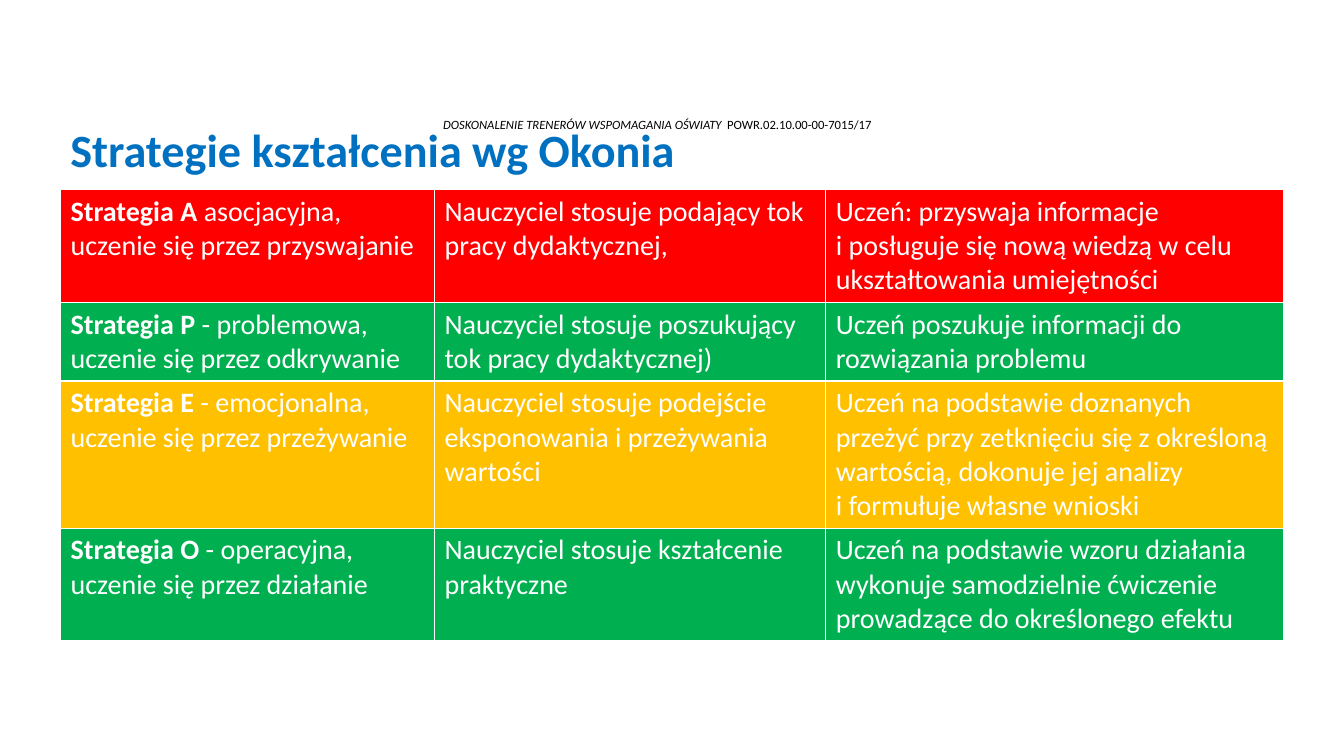
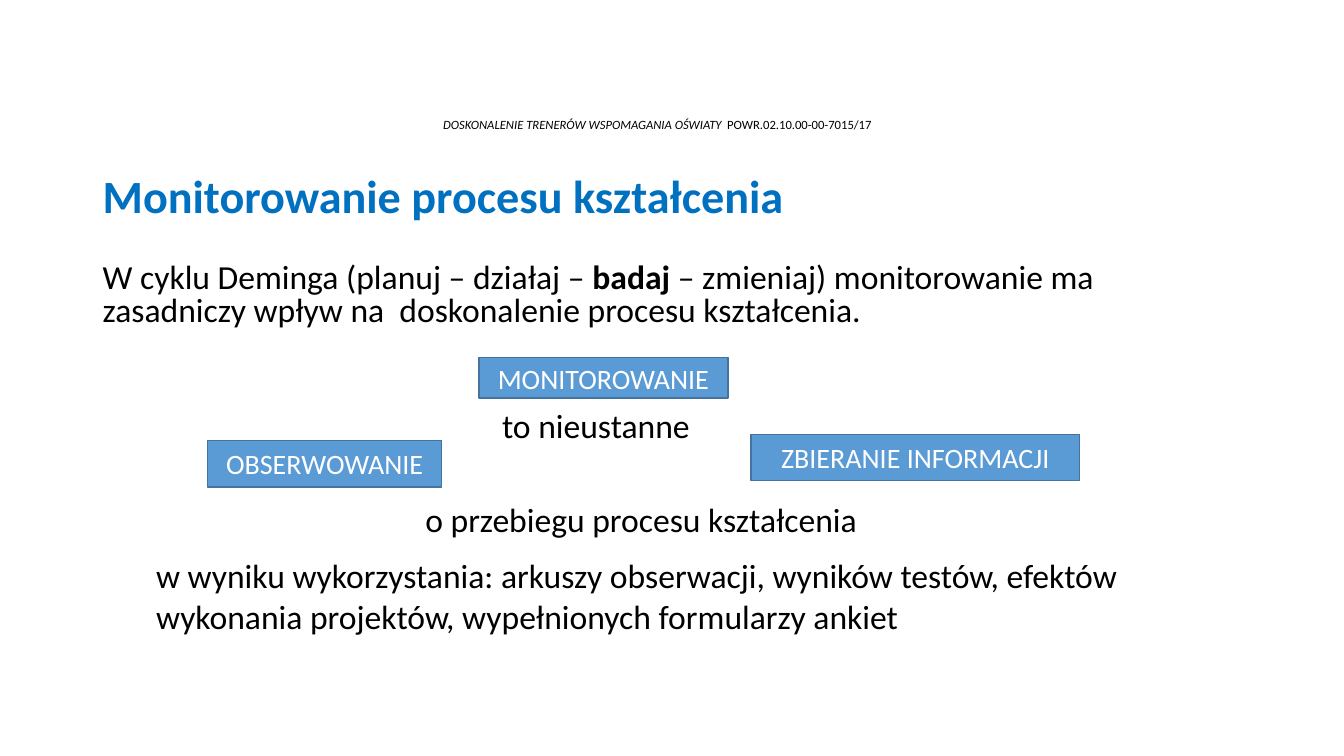
"""Build two slides on teaching strategies and on monitoring the learning process."""
from dataclasses import dataclass

from lxml.etree import SubElement
from pptx import Presentation
from pptx.dml.color import RGBColor
from pptx.enum.shapes import MSO_SHAPE as Preset
from pptx.enum.text import MSO_ANCHOR as Anchor, PP_ALIGN as Align
from pptx.oxml.ns import qn
from pptx.util import Inches, Pt

FONT = "Calibri"
BLACK, WHITE, TITLE_BLUE = "000000", "FFFFFF", "0070C0"
BOX_FILL, BOX_LINE = "5B9BD5", "43739E"
RED, GREEN, AMBER = "FF0000", "00B050", "FFC000"


@dataclass(frozen=True)
class Run:
    text: str
    bold: bool = False
    italic: bool = False


@dataclass(frozen=True)
class Area:
    left: float
    top: float
    width: float
    height: float

    def lengths(self):
        return [Inches(value) for value in (self.left, self.top, self.width, self.height)]


@dataclass(frozen=True)
class Strategy:
    name: str
    description: str
    teacher: str
    pupil: str
    color: str
    height: float


@dataclass(frozen=True)
class Keyword:
    text: str
    area: Area
    preset: Preset = Preset.RECTANGLE


HEADER = [
    Run("DOSKONALENIE TRENERÓW WSPOMAGANIA OŚWIATY  ", italic=True),
    Run("POWR.02.10.00-00-7015/17"),
]
COLUMN_WIDTHS = (3.71, 3.88, 4.54)
STRATEGIES = [
    Strategy("Strategia A ", "asocjacyjna, uczenie się przez przyswajanie",
             "Nauczyciel stosuje podający tok pracy dydaktycznej,",
             "Uczeń: przyswaja informacje\ni posługuje się nową wiedzą w celu "
             "ukształtowania umiejętności", RED, 1.12),
    Strategy("Strategia P ", "- problemowa, uczenie się przez odkrywanie",
             "Nauczyciel stosuje poszukujący tok pracy dydaktycznej)",
             "Uczeń poszukuje informacji do rozwiązania problemu", GREEN, 0.78),
    Strategy("Strategia E ", "- emocjonalna, uczenie się przez przeżywanie",
             "Nauczyciel stosuje podejście eksponowania i przeżywania wartości",
             "Uczeń na podstawie doznanych przeżyć przy zetknięciu się z określoną "
             "wartością, dokonuje jej analizy\ni formułuje własne wnioski", AMBER, 1.46),
    Strategy("Strategia O ", "- operacyjna, uczenie się przez działanie",
             "Nauczyciel stosuje kształcenie praktyczne",
             "Uczeń na podstawie wzoru działania wykonuje samodzielnie ćwiczenie "
             "prowadzące do określonego efektu", GREEN, 1.12),
]
KEYWORDS = [
    Keyword("MONITOROWANIE", Area(4.75, 3.55, 2.47, 0.4)),
    Keyword("OBSERWOWANIE", Area(2.06, 4.37, 2.32, 0.46), Preset.FLOWCHART_PROCESS),
    Keyword("ZBIERANIE INFORMACJI", Area(7.45, 4.31, 3.26, 0.46)),
]


def rgb(color: str) -> RGBColor:
    return RGBColor.from_string(color)


def write(frame, runs: list[Run], size: float, color: str = BLACK,
          align: Align = Align.LEFT, spacing: float = 1.0) -> None:
    paragraph = frame.paragraphs[0]
    paragraph.alignment = align
    paragraph.line_spacing = spacing
    for part in runs:
        for index, line in enumerate(part.text.split("\n")):
            if index:
                paragraph.add_line_break()
            run = paragraph.add_run()
            run.text = line
            font = run.font
            font.name, font.size = FONT, Pt(size)
            font.bold, font.italic = part.bold, part.italic
            font.color.rgb = rgb(color)


def add_text(slide, area: Area, runs: list[Run], size: float = 24, color: str = BLACK,
             align: Align = Align.LEFT, spacing: float = 1.0,
             anchor: Anchor = Anchor.TOP, wrap: bool = True) -> None:
    frame = slide.shapes.add_textbox(*area.lengths()).text_frame
    frame.word_wrap = wrap
    frame.vertical_anchor = anchor
    write(frame, runs, size, color, align, spacing)


def add_titled_slide(presentation, title: str, area: Area):
    slide = presentation.slides.add_slide(presentation.slide_layouts[6])
    add_text(slide, Area(0.79, 1.12, 11.46, 0.24), HEADER, 9,
             align=Align.CENTER, spacing=0.9, anchor=Anchor.MIDDLE)
    add_text(slide, area, [Run(title, bold=True)], 33, TITLE_BLUE,
             spacing=0.9, anchor=Anchor.MIDDLE)
    return slide


def set_borders(cell, color: str) -> None:
    properties = cell._tc.get_or_add_tcPr()
    for side in ("a:lnL", "a:lnR", "a:lnT", "a:lnB"):
        line = SubElement(properties, qn(side), w=str(Pt(1)))
        fill = SubElement(line, qn("a:solidFill"))
        SubElement(fill, qn("a:srgbClr"), val=color)


def add_strategy_table(slide) -> None:
    area = Area(0.6, 1.88, sum(COLUMN_WIDTHS), sum(item.height for item in STRATEGIES))
    table = slide.shapes.add_table(len(STRATEGIES), len(COLUMN_WIDTHS), *area.lengths()).table
    table.first_row = table.horz_banding = False
    for column, width in zip(table.columns, COLUMN_WIDTHS):
        column.width = Inches(width)
    for row, strategy in zip(table.rows, STRATEGIES):
        row.height = Inches(strategy.height)
        contents = (
            [Run(strategy.name, bold=True), Run(strategy.description)],
            [Run(strategy.teacher)],
            [Run(strategy.pupil)],
        )
        for cell, runs in zip(row.cells, contents):
            set_borders(cell, WHITE)
            cell.fill.solid()
            cell.fill.fore_color.rgb = rgb(strategy.color)
            write(cell.text_frame, runs, 20, WHITE)


def add_keyword(slide, keyword: Keyword) -> None:
    shape = slide.shapes.add_shape(keyword.preset, *keyword.area.lengths())
    shape.shadow.inherit = False
    shape.fill.solid()
    shape.fill.fore_color.rgb = rgb(BOX_FILL)
    shape.line.color.rgb = rgb(BOX_LINE)
    shape.line.width = Pt(1)
    shape.text_frame.word_wrap = True
    shape.text_frame.vertical_anchor = Anchor.MIDDLE
    write(shape.text_frame, [Run(keyword.text)], 20, WHITE, Align.CENTER)


def build_strategies(presentation) -> None:
    slide = add_titled_slide(presentation, "Strategie kształcenia wg Okonia",
                             Area(0.6, 1.15, 11.5, 0.73))
    add_strategy_table(slide)


def build_monitoring(presentation) -> None:
    slide = add_titled_slide(presentation, "Monitorowanie procesu kształcenia",
                             Area(0.92, 1.46, 11.5, 1.01))
    introduction = [
        Run("W cyklu Deminga (planuj – działaj – "),
        Run("badaj", bold=True),
        Run(" – zmieniaj) monitorowanie ma zasadniczy wpływ na  doskonalenie "
            "procesu kształcenia."),
    ]
    add_text(slide, Area(0.92, 2.57, 11.5, 0.74), introduction, spacing=0.8)
    for keyword in KEYWORDS:
        add_keyword(slide, keyword)
    add_text(slide, Area(4.75, 3.97, 2.32, 0.5), [Run("to nieustanne")], align=Align.CENTER)
    add_text(slide, Area(4.12, 4.9, 4.53, 0.5), [Run("o przebiegu procesu kształcenia")],
             wrap=False)
    add_text(slide, Area(1.45, 5.46, 10, 0.91),
             [Run("w wyniku wykorzystania: arkuszy obserwacji, wyników testów, efektów "
                  "wykonania projektów, wypełnionych formularzy ankiet")])


def main() -> None:
    presentation = Presentation()
    presentation.slide_width, presentation.slide_height = Inches(13.33), Inches(7.5)
    build_strategies(presentation)
    build_monitoring(presentation)
    presentation.save("out.pptx")


if __name__ == "__main__":
    main()
